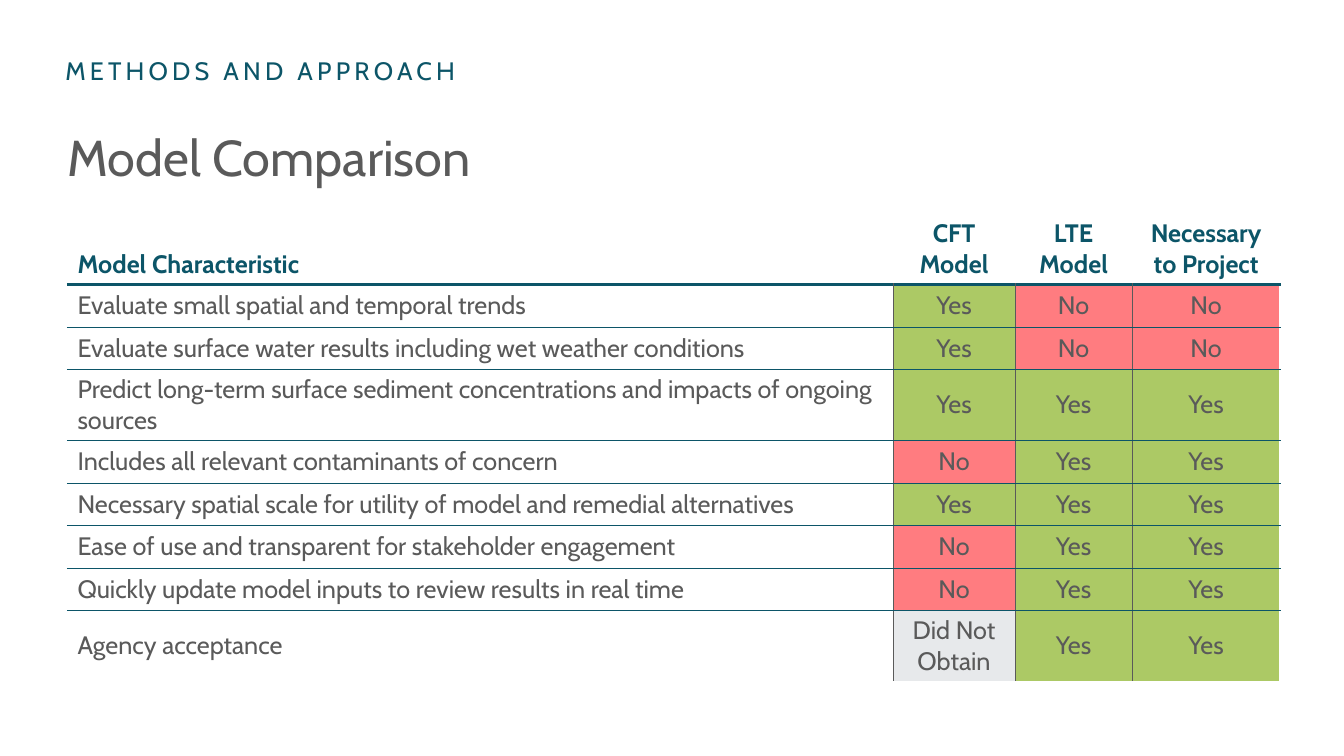
import lxml.etree
import pptx
import pptx.dml.color
import pptx.enum.text
import pptx.oxml
import pptx.oxml.ns
import pptx.util

Cm = pptx.util.Cm
ALIGN = pptx.enum.text.PP_ALIGN
ANCHOR = pptx.enum.text.MSO_ANCHOR
TEAL, GRAY, WHITE = "0C5568", "5A5A5A", "FFFFFF"
FILLS = {"Yes": "ACC965", "No": "FF7C80", "Did Not Obtain": "E7E9EB"}


def paint(target, color):
    """Give a fill or a font a solid colour."""
    if hasattr(target, "solid"):
        target.solid()
        target.fore_color.rgb = pptx.dml.color.RGBColor.from_string(color)
    else:
        target.color.rgb = pptx.dml.color.RGBColor.from_string(color)


def write(frame, text, size=18, color=GRAY, bold=False, align=ALIGN.LEFT, space=0):
    """Write one formatted line; space is the letter spacing in points."""
    para = frame.paragraphs[0]
    para.alignment = align
    run = para.add_run()
    run.text = text
    run.font.name = "Cabin"
    run.font.size = pptx.util.Pt(size)
    run.font.bold = bold
    paint(run.font, color)
    if space:
        run.font._element.set("spc", str(space * 100))


deck = pptx.Presentation()
deck.slide_width, deck.slide_height = Cm(33.86), Cm(19.05)
slide = deck.slides.add_slide(deck.slide_layouts[5])

# Section label and title
label = slide.shapes.add_textbox(Cm(1.65), Cm(1.4), Cm(16.51), Cm(0.76)).text_frame
label.margin_left = label.margin_right = label.margin_top = label.margin_bottom = 0
label.word_wrap = True
label.vertical_anchor = ANCHOR.MIDDLE
write(label, "METHODS AND APPROACH", color=TEAL, space=3)

title = slide.shapes.title
title.left, title.top, title.width, title.height = Cm(1.7), Cm(3), Cm(30.53), Cm(1.9)
head = title.text_frame
head.margin_left = head.margin_right = 0
head.auto_size = pptx.enum.text.MSO_AUTO_SIZE.NONE
head.vertical_anchor = ANCHOR.MIDDLE
write(head, "Model Comparison", size=36)

# Comparison table
rows = [
    ("Model Characteristic", "CFT Model", "LTE Model", "Necessary to Project"),
    ("Evaluate small spatial and temporal trends", "Yes", "No", "No"),
    ("Evaluate surface water results including wet weather conditions", "Yes", "No", "No"),
    ("Predict long-term surface sediment concentrations and impacts of ongoing sources",
     "Yes", "Yes", "Yes"),
    ("Includes all relevant contaminants of concern", "No", "Yes", "Yes"),
    ("Necessary spatial scale for utility of model and remedial alternatives",
     "Yes", "Yes", "Yes"),
    ("Ease of use and transparent for stakeholder engagement", "No", "Yes", "Yes"),
    ("Quickly update model inputs to review results in real time", "No", "Yes", "Yes"),
    ("Agency acceptance", "Did Not Obtain", "Yes", "Yes"),
]
widths = [20.8, 3.07, 2.95, 3.73]
tall = {0, 3, 8}
last_row, last_col = len(rows) - 1, len(widths) - 1

table = slide.shapes.add_table(
    len(rows), len(widths), Cm(1.7), Cm(5.38), Cm(sum(widths)), Cm(11.79)).table
table.first_row = table.horz_banding = False
for col, width in zip(table.columns, widths):
    col.width = Cm(width)

edge, rule, thin, thick = (WHITE, 1), (GRAY, 0.25), (TEAL, 0.25), (TEAL, 2.25)
for r, texts in enumerate(rows):
    table.rows[r].height = Cm(1.79 if r in tall else 1.07)
    inner = rule if r else None
    for c, text in enumerate(texts):
        cell = table.cell(r, c)
        cell.vertical_anchor = ANCHOR.MIDDLE if r else ANCHOR.BOTTOM
        write(cell.text_frame, text, color=GRAY if r else TEAL, bold=r == 0,
              align=ALIGN.CENTER if c else ALIGN.LEFT)

        lines = {
            "L": inner if c else edge,
            "R": edge if c == last_col else inner,
            "T": edge if r == 0 else thick if r == 1 else thin,
            "B": thick if r == 0 else edge if r == last_row else thin,
        }
        props = cell._tc.get_or_add_tcPr()
        for side, line in lines.items():
            border = lxml.etree.SubElement(props, pptx.oxml.ns.qn("a:ln" + side))
            if line is None:
                lxml.etree.SubElement(border, pptx.oxml.ns.qn("a:noFill"))
                continue
            color, weight = line
            border.set("w", str(pptx.util.Pt(weight)))
            solid = lxml.etree.SubElement(border, pptx.oxml.ns.qn("a:solidFill"))
            lxml.etree.SubElement(solid, pptx.oxml.ns.qn("a:srgbClr"), val=color)

        if text in FILLS:
            paint(cell.fill, FILLS[text])
        else:
            cell.fill.background()

deck.save("out.pptx")
